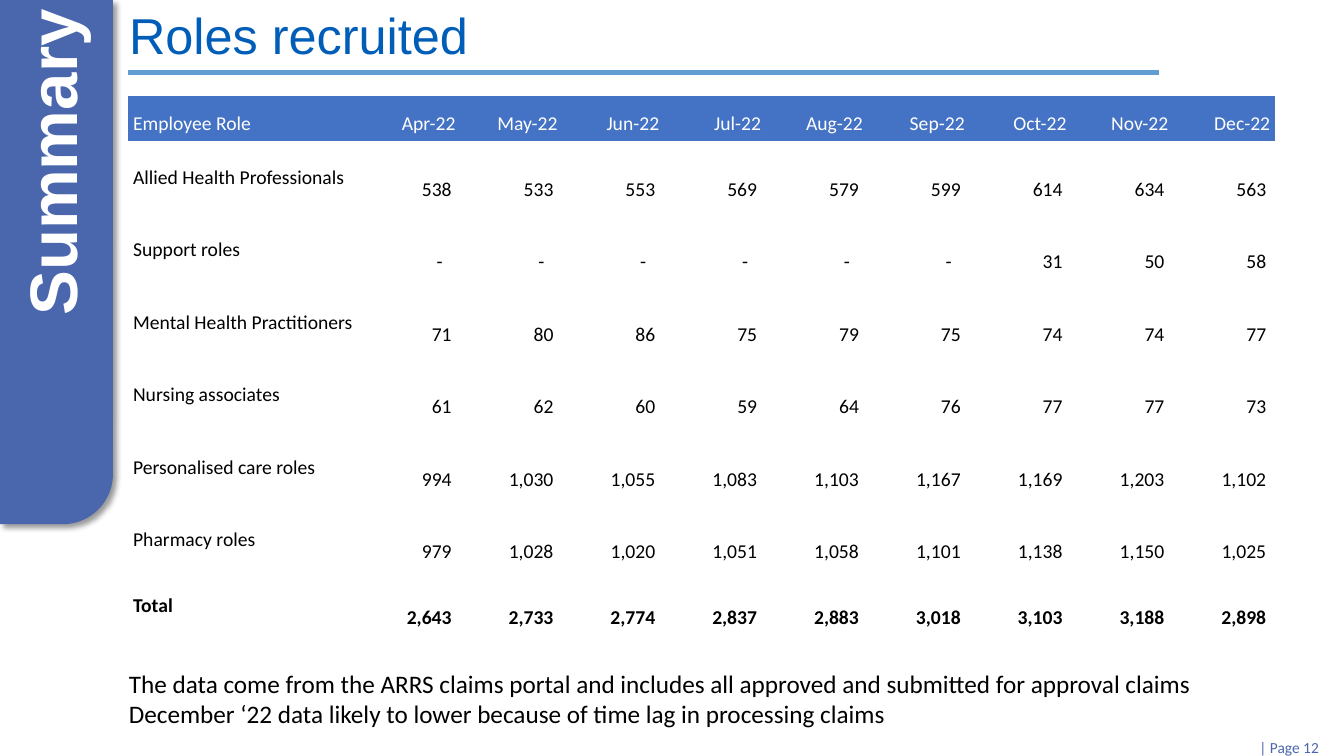
from dataclasses import dataclass

from lxml import etree
from pptx import Presentation
from pptx import util as u
from pptx.dml.color import RGBColor
from pptx.enum import shapes, text
from pptx.oxml.ns import qn


@dataclass(frozen=True)
class Theme:
    """Colours, fonts and type sizes of the slide."""
    tab: str = "4A66AC"
    rule: str = "629DD1"
    title: str = "005EB8"
    header: str = "4472C4"
    ink: str = "000000"
    paper: str = "FFFFFF"
    heading_font: str = "Arial"
    body_font: str = "Calibri"
    tab_size: int = 48
    title_size: int = 36
    note_size: int = 18
    table_size: int = 14
    page_size: int = 11


THEME = Theme()
PX = u.Inches(1) // 100
NO_GRID_STYLE = "{2D5ABB26-0587-4C30-8999-92F81FD0307C}"
LEFT, RIGHT = text.PP_ALIGN.LEFT, text.PP_ALIGN.RIGHT
TOP, MIDDLE, BOTTOM = (text.MSO_ANCHOR.TOP, text.MSO_ANCHOR.MIDDLE,
                       text.MSO_ANCHOR.BOTTOM)

MONTHS = ["Apr-22", "May-22", "Jun-22", "Jul-22", "Aug-22",
          "Sep-22", "Oct-22", "Nov-22", "Dec-22"]
ROLES = {
    "Allied Health Professionals": [538, 533, 553, 569, 579, 599, 614, 634, 563],
    "Support roles": [0, 0, 0, 0, 0, 0, 31, 50, 58],
    "Mental Health Practitioners": [71, 80, 86, 75, 79, 75, 74, 74, 77],
    "Nursing associates": [61, 62, 60, 59, 64, 76, 77, 77, 73],
    "Personalised care roles": [994, 1030, 1055, 1083, 1103, 1167, 1169, 1203, 1102],
    "Pharmacy roles": [979, 1028, 1020, 1051, 1058, 1101, 1138, 1150, 1025],
}
NOTES = [
    "The data come from the ARRS claims portal and includes all approved"
    " and submitted for approval claims",
    "December ‘22 data likely to lower because of time lag in processing claims",
]


def px(*lengths):
    """Turn pixel lengths into EMU."""
    return [u.Emu(length * PX) for length in lengths]


def write(frame, *lines, size, color, font=THEME.body_font, bold=False,
          align=LEFT, spacing=1.0):
    """Fill a text frame with one formatted paragraph per line."""
    for number, line in enumerate(lines):
        paragraph = frame.add_paragraph() if number else frame.paragraphs[0]
        paragraph.alignment = align
        paragraph.line_spacing = spacing
        run = paragraph.add_run()
        run.text = line
        run.font.size = u.Pt(size)
        run.font.name = font
        run.font.bold = bold
        run.font.color.rgb = RGBColor.from_string(color)


def inset(holder, anchor, left, top, right, bottom):
    """Set the anchor and margins of a cell or text frame."""
    holder.vertical_anchor = anchor
    (holder.margin_left, holder.margin_top,
     holder.margin_right, holder.margin_bottom) = px(left, top, right, bottom)


def text_area(slide, box, anchor=TOP, left=10):
    """Add a wrapping text box and return its shape."""
    area = slide.shapes.add_textbox(*px(*box))
    area.text_frame.word_wrap = True
    inset(area.text_frame, anchor, left, 5, 10, 5)
    return area


def add_shadow(shape):
    """Give a shape a soft shadow towards the lower right."""
    shape.shadow.inherit = False
    effects = shape._element.spPr.find(qn("a:effectLst"))
    shadow = etree.SubElement(effects, qn("a:outerShdw"), blurRad=str(u.Pt(4)),
                              dist=str(u.Pt(3)), dir="2700000", algn="tl",
                              rotWithShape="0")
    shade = etree.SubElement(shadow, qn("a:srgbClr"), val=THEME.ink)
    etree.SubElement(shade, qn("a:alpha"), val="40000")


def section_tab(slide, box):
    """Draw the side tab with its upright section name."""
    left, top, width, height = box
    tab = slide.shapes.add_shape(shapes.MSO_SHAPE.ROUND_1_RECTANGLE, *px(*box))
    tab.adjustments[0] = 0.444
    tab.rotation = 180
    tab._element.spPr.xfrm.set("flipH", "1")
    tab.fill.solid()
    tab.fill.fore_color.rgb = RGBColor.from_string(THEME.tab)
    tab.line.fill.background()
    add_shadow(tab)

    length, depth = height + 12, 91
    center = left + 50
    section = text_area(slide, (center - length // 2, top + (length - depth) // 2,
                                length, depth), BOTTOM)
    section.rotation = 270
    write(section.text_frame, "Summary", size=THEME.tab_size, color=THEME.paper,
          font=THEME.heading_font, bold=True, align=RIGHT)


def heading(slide, box):
    """Place the title and the rule under it."""
    left, top, width, height = box
    title = slide.shapes.title
    title.left, title.top, title.width, title.height = px(*box)
    title.text_frame.auto_size = text.MSO_AUTO_SIZE.NONE
    inset(title.text_frame, TOP, 10, 5, 10, 5)
    write(title.text_frame, "Roles recruited", size=THEME.title_size,
          color=THEME.title, font=THEME.heading_font)

    rule_y = top + height + 2
    rule = slide.shapes.add_connector(
        shapes.MSO_CONNECTOR.STRAIGHT,
        *px(left + 9, rule_y, left + 1032, rule_y))
    rule.line.color.rgb = RGBColor.from_string(THEME.rule)
    rule.line.width = u.Pt(3)
    etree.SubElement(rule._element.spPr, qn("a:effectLst"))


def roles_table(slide, box):
    """Build the table of roles by month with its total row."""
    totals = [sum(month) for month in zip(*ROLES.values())]
    rows = [("Employee Role", MONTHS), *ROLES.items(), ("Total", totals)]
    heights = [45] + [72] * len(ROLES) + [57]
    widths = [238, 92] + [101] * (len(MONTHS) - 1)
    table = slide.shapes.add_table(len(rows), len(widths), *px(*box)).table
    table.first_row = table.horz_banding = False
    table._tbl.tblPr.find(qn("a:tableStyleId")).text = NO_GRID_STYLE
    for column, width in zip(table.columns, widths):
        column.width = u.Emu(width * PX)
    for row, height in zip(table.rows, heights):
        row.height = u.Emu(height * PX)

    for r, (role, values) in enumerate(rows):
        for c, value in enumerate([role, *values]):
            cell = table.cell(r, c)
            is_count = isinstance(value, int)
            if r == 0:
                cell.fill.solid()
                cell.fill.fore_color.rgb = RGBColor.from_string(THEME.header)
            else:
                cell.fill.background()
            label = (f"{value:,}" if value else "-") if is_count else value
            right = (9 if value else 18) if is_count else 5
            inset(cell, MIDDLE if r else BOTTOM, 5, 29 if is_count else 5, right, 5)
            write(cell.text_frame, label, size=THEME.table_size,
                  color=THEME.ink if r else THEME.paper,
                  bold=role == "Total", align=RIGHT if c else LEFT)


def data_notes(slide, box):
    """Write the notes on the data below the table."""
    write(text_area(slide, box).text_frame, *NOTES,
          size=THEME.note_size, color=THEME.ink)


def page_mark(slide, box):
    """Write the page number in the corner."""
    write(text_area(slide, box, left=29).text_frame, "| Page 12",
          size=THEME.page_size, color=THEME.tab, spacing=0.9)


def main():
    """Build and save the slide."""
    deck = Presentation()
    deck.slide_width, deck.slide_height = px(1333, 750)
    slide = deck.slides.add_slide(deck.slide_layouts.get_by_name("Title Only"))
    section_tab(slide, (0, 0, 112, 520))
    heading(slide, (118, -1, 1139, 71))
    page_mark(slide, (1220, 729, 113, 40))
    roles_table(slide, (127, 95, 1138, 534))
    data_notes(slide, (118, 658, 1086, 71))
    deck.save("out.pptx")


if __name__ == "__main__":
    main()
